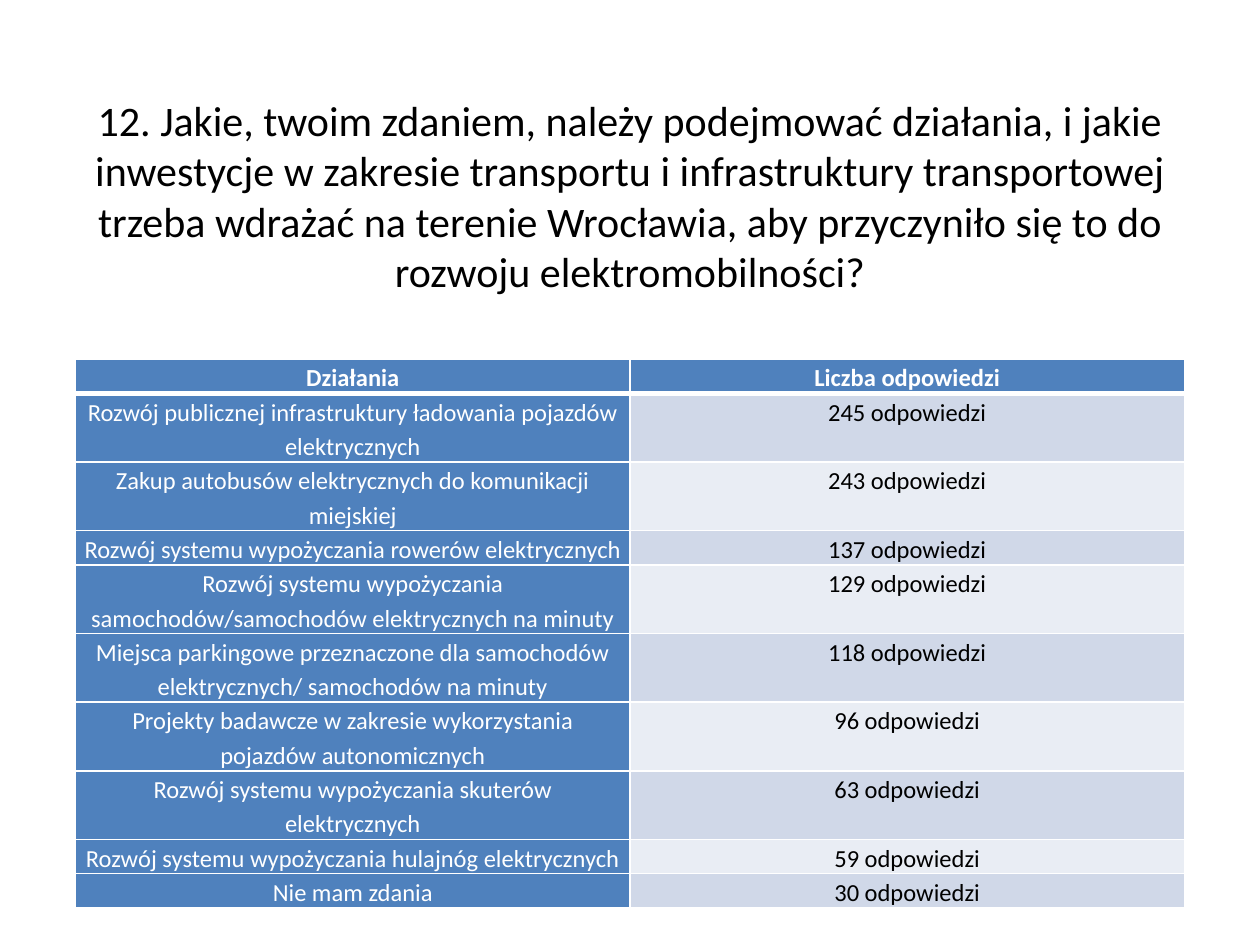
from lxml.etree import SubElement
from pptx import Presentation
from pptx.dml.color import RGBColor
from pptx.enum.text import MSO_ANCHOR, MSO_AUTO_SIZE, PP_ALIGN
from pptx.oxml.ns import qn
from pptx.util import Inches, Pt

SLIDE_WIDTH, SLIDE_HEIGHT = Inches(10), Inches(7.5)
BLUE, WHITE, BLACK = "4F81BD", "FFFFFF", "000000"
BANDS = ("D0D8E8", "E9EDF4")
LINE_HEIGHT = Inches(0.27)

QUESTION = (
    "12. Jakie, twoim zdaniem, należy podejmować działania, i jakie inwestycje "
    "w zakresie transportu i infrastruktury transportowej trzeba wdrażać na terenie "
    "Wrocławia, aby przyczyniło się to do rozwoju elektromobilności?"
)
HEADINGS = ("Działania", "Liczba odpowiedzi")
# Action, number of answers, lines of text in the row
ANSWERS = [
    ("Rozwój publicznej infrastruktury ładowania pojazdów elektrycznych", 245, 2),
    ("Zakup autobusów elektrycznych do komunikacji miejskiej", 243, 2),
    ("Rozwój systemu wypożyczania rowerów elektrycznych", 137, 1),
    ("Rozwój systemu wypożyczania samochodów/samochodów elektrycznych na minuty", 129, 2),
    ("Miejsca parkingowe przeznaczone dla samochodów elektrycznych/ samochodów na minuty", 118, 2),
    ("Projekty badawcze w zakresie wykorzystania pojazdów autonomicznych", 96, 2),
    ("Rozwój systemu wypożyczania skuterów elektrycznych", 63, 2),
    ("Rozwój systemu wypożyczania hulajnóg elektrycznych", 59, 1),
    ("Nie mam zdania", 30, 1),
]


def color(value):
    return RGBColor.from_string(value)


def share(left, top, width, height):
    """Turn shares of the slide's size into a box."""
    return (int(left * SLIDE_WIDTH), int(top * SLIDE_HEIGHT),
            int(width * SLIDE_WIDTH), int(height * SLIDE_HEIGHT))


def write(text_frame, text, size, text_color, bold=False, line_spacing=None):
    paragraph = text_frame.paragraphs[0]
    paragraph.alignment = PP_ALIGN.CENTER
    paragraph.line_spacing = line_spacing
    run = paragraph.add_run()
    run.text = text
    run.font.name = "Calibri"
    run.font.size = Pt(size)
    run.font.bold = bold
    run.font.color.rgb = color(text_color)


def set_borders(cell, bottom_width):
    properties = cell._tc.get_or_add_tcPr()
    widths = {"a:lnL": 1, "a:lnR": 1, "a:lnT": 1, "a:lnB": bottom_width}
    for position, (tag, width) in enumerate(widths.items()):
        line = SubElement(properties, qn(tag), w=str(Pt(width)))
        fill = SubElement(line, qn("a:solidFill"))
        SubElement(fill, qn("a:srgbClr"), val=WHITE)
        properties.insert(position, line)


def fill_cell(cell, text, fill, text_color, bold=False, bottom_width=1):
    cell.margin_left = cell.margin_right = Inches(0.07)
    cell.margin_top = cell.margin_bottom = 0
    cell.fill.solid()
    cell.fill.fore_color.rgb = color(fill)
    set_borders(cell, bottom_width)
    write(cell.text_frame, text, 14, text_color, bold, line_spacing=1.15)


def place_question(slide, box):
    title = slide.shapes.title
    title.left, title.top, title.width, title.height = box
    text_frame = title.text_frame
    text_frame.auto_size = MSO_AUTO_SIZE.NONE
    text_frame.word_wrap = True
    text_frame.vertical_anchor = MSO_ANCHOR.TOP
    text_frame.margin_top = text_frame.margin_bottom = 0
    write(text_frame, QUESTION, 24, BLACK)


def place_answers(slide, box):
    table = slide.shapes.add_table(len(ANSWERS) + 1, len(HEADINGS), *box).table
    table.rows[0].height = LINE_HEIGHT
    for column, heading in enumerate(HEADINGS):
        fill_cell(table.cell(0, column), heading, BLUE, WHITE, bold=True, bottom_width=3)
    for row, (action, count, lines) in enumerate(ANSWERS, start=1):
        table.rows[row].height = lines * LINE_HEIGHT
        fill_cell(table.cell(row, 0), action, BLUE, WHITE)
        fill_cell(table.cell(row, 1), f"{count} odpowiedzi", BANDS[(row - 1) % 2], BLACK)


def main():
    presentation = Presentation()
    presentation.slide_width, presentation.slide_height = SLIDE_WIDTH, SLIDE_HEIGHT
    slide = presentation.slides.add_slide(presentation.slide_layouts[5])
    slide.background.fill.solid()
    slide.background.fill.fore_color.rgb = color(WHITE)
    # Survey question above the table of answers
    place_question(slide, share(0.05, 0.1, 0.9, 0.22))
    place_answers(slide, share(0.06, 0.38, 0.88, 0.58))
    presentation.save("out.pptx")


if __name__ == "__main__":
    main()
